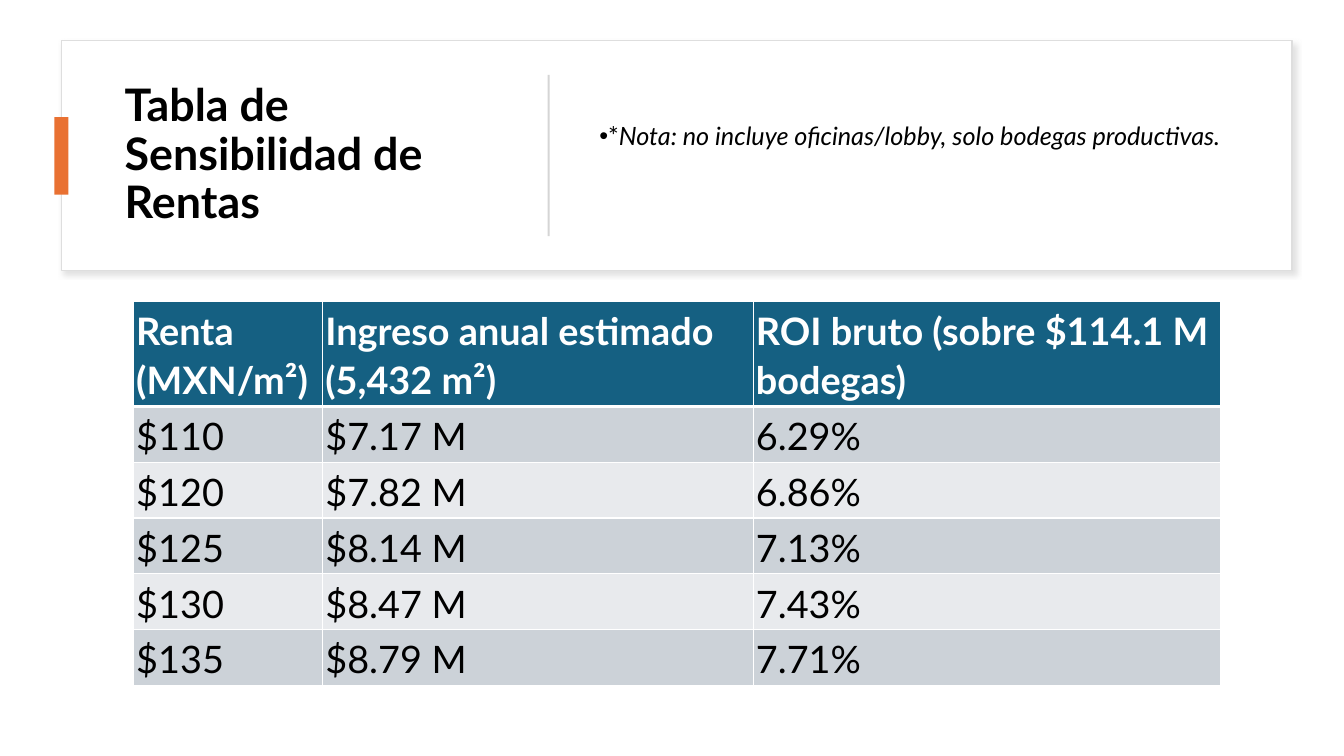
import pptx
import pptx.util
import pptx.dml.color
import pptx.enum.shapes
import pptx.enum.text
import pptx.oxml
import pptx.oxml.ns

Pt = pptx.util.Pt
FONT = "Lato"
COLORS = {
    "white": "FFFFFF",
    "black": "000000",
    "outline": "DEDEDE",
    "shadow": "C5C5C5",
    "accent": "E97132",
    "divider": "D5D5D5",
    "header": "156082",
    "band_dark": "CCD2D8",
    "band_light": "E8EAED",
}
ROWS = [
    ("Renta (MXN/m²)", "Ingreso anual estimado (5,432 m²)", "ROI bruto (sobre $114.1 M bodegas)"),
    ("$110", "$7.17 M", "6.29%"),
    ("$120", "$7.82 M", "6.86%"),
    ("$125", "$8.14 M", "7.13%"),
    ("$130", "$8.47 M", "7.43%"),
    ("$135", "$8.79 M", "7.71%"),
]


def rgb(name):
    return pptx.dml.color.RGBColor.from_string(COLORS[name])


def xml(markup):
    return pptx.oxml.parse_xml(markup.replace(" ", f" {pptx.oxml.ns.nsdecls('a')} ", 1))


def add_rect(slide, x, y, w, h, fill, line=None):
    sp = slide.shapes.add_shape(
        pptx.enum.shapes.MSO_SHAPE.RECTANGLE, Pt(x), Pt(y), Pt(w), Pt(h))
    sp.shadow.inherit = False
    sp.fill.solid()
    sp.fill.fore_color.rgb = rgb(fill)
    if line:
        sp.line.color.rgb = rgb(line)
        sp.line.width = Pt(1)
    else:
        sp.line.fill.background()
    return sp


def add_text_box(slide, x, y, w, h):
    tf = slide.shapes.add_textbox(Pt(x), Pt(y), Pt(w), Pt(h)).text_frame
    tf.word_wrap = True
    tf.vertical_anchor = pptx.enum.text.MSO_ANCHOR.MIDDLE
    p = tf.paragraphs[0]
    p.line_spacing = 0.9
    return tf, p


def add_run(p, text, size, color, bold=False, italic=False):
    r = p.add_run()
    r.text = text
    r.font.name = FONT
    r.font.size = Pt(size)
    r.font.bold = bold
    r.font.italic = italic
    r.font.color.rgb = rgb(color)


def add_header(slide, x, y, w, h):
    card = add_rect(slide, x, y, w, h, "white", "outline")
    effects = card._element.spPr.find(pptx.oxml.ns.qn("a:effectLst"))
    effects.append(xml(
        f'<a:outerShdw blurRad="{Pt(4)}" dist="{Pt(3)}" dir="2700000" algn="tl" rotWithShape="0">'
        f'<a:srgbClr val="{COLORS["shadow"]}"><a:alpha val="50000"/></a:srgbClr></a:outerShdw>'))

    text_y, text_h = y + 17.3, 129.6
    tf, p = add_text_box(slide, x + 38.2, text_y, 280, text_h)
    add_run(p, "Tabla de Sensibilidad de Rentas", 32, "black", bold=True)

    add_rect(slide, x - 5, y + 54.7, 10, 55.4, "accent")
    add_rect(slide, x + 347.4, y + (h - 115.2) / 2, 1.4, 115.2, "divider")

    tf, p = add_text_box(slide, x + 377.3, text_y, 472.3, text_h)
    tf.margin_bottom = Pt(29)
    pPr = p._p.get_or_add_pPr()
    pPr.set("marL", "0")
    pPr.set("indent", str(-Pt(18)))
    pPr.append(xml('<a:buFont typeface="Arial"/>'))
    pPr.append(xml('<a:buChar char="•"/>'))
    add_run(p, "*", 18, "black")
    add_run(p, "Nota: no incluye oficinas/lobby, solo bodegas productivas.", 18, "black", italic=True)


def set_borders(cell, bottom):
    tcPr = cell._tc.get_or_add_tcPr()
    for side, width in (("L", 1), ("R", 1), ("T", 1), ("B", bottom)):
        tcPr.append(xml(
            f'<a:ln{side} w="{Pt(width)}"><a:solidFill><a:srgbClr val="{COLORS["white"]}"/>'
            f'</a:solidFill></a:ln{side}>'))


def fill_cell(cell, text, row):
    is_header = row == 0
    set_borders(cell, 3 if is_header else 1)
    cell.fill.solid()
    band = "band_dark" if row % 2 else "band_light"
    cell.fill.fore_color.rgb = rgb("header" if is_header else band)
    cell.vertical_anchor = pptx.enum.text.MSO_ANCHOR.MIDDLE
    cell.margin_left = cell.margin_right = cell.margin_top = cell.margin_bottom = Pt(2)
    p = cell.text_frame.paragraphs[0]
    p.line_spacing = 1.07
    p.space_after = Pt(8)
    add_run(p, text, 27, "white" if is_header else "black", bold=is_header)


def add_rent_table(slide, x, y, w, h):
    header_h = 74.8
    row_h = (h - header_h) / (len(ROWS) - 1)
    table = slide.shapes.add_table(
        len(ROWS), len(ROWS[0]), Pt(x), Pt(y), Pt(w), Pt(h)).table
    table.first_row = table.horz_banding = False
    for col, share in zip(table.columns, (0.174, 0.396, 0.43)):
        col.width = Pt(w * share)
    for i, values in enumerate(ROWS):
        table.rows[i].height = Pt(row_h if i else header_h)
        for j, text in enumerate(values):
            fill_cell(table.cell(i, j), text, i)


def main():
    prs = pptx.Presentation()
    prs.slide_width = Pt(960)
    prs.slide_height = Pt(540)
    slide = prs.slides.add_slide(prs.slide_layouts[6])
    add_header(slide, 43.8, 29, 879.2, 164.2)
    add_rent_table(slide, 95.3, 215.5, 776.6, 274.3)
    prs.save("out.pptx")


if __name__ == "__main__":
    main()
